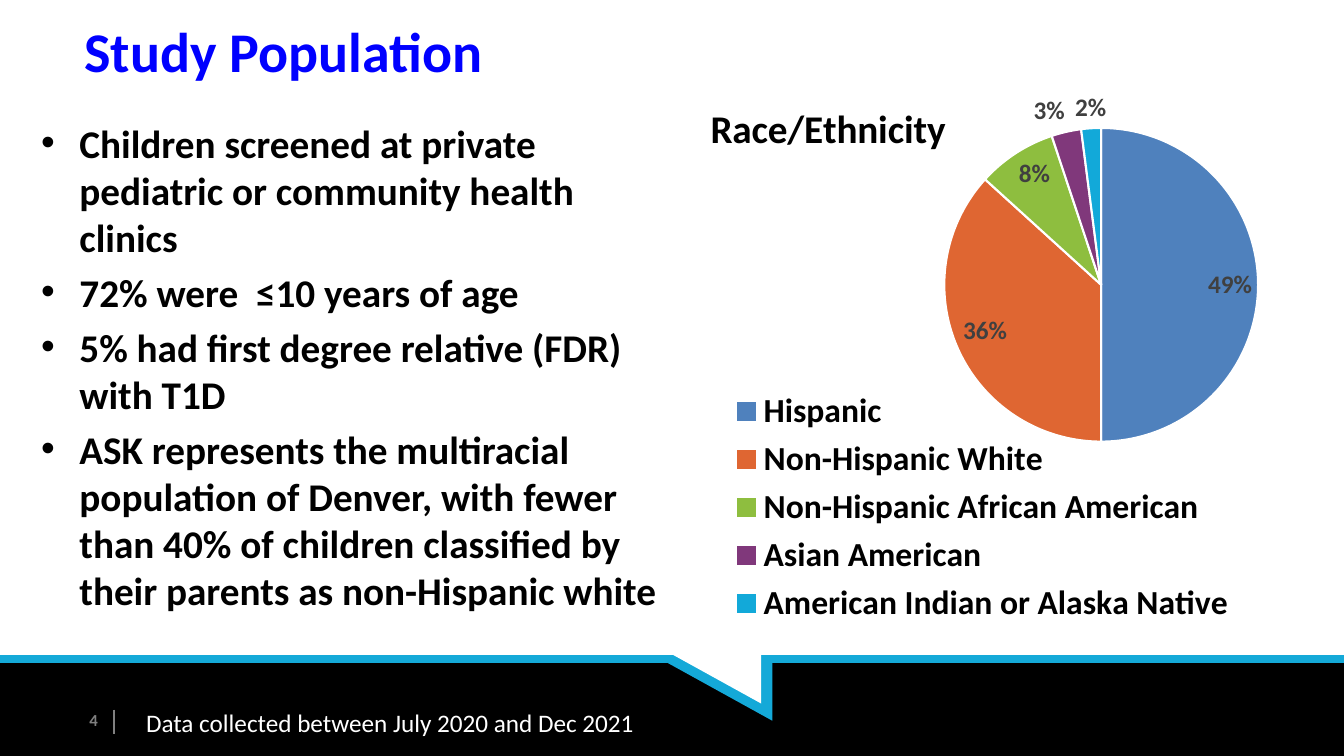
from lxml import etree
from pptx import Presentation
from pptx.chart.data import CategoryChartData
from pptx.dml.color import RGBColor
from pptx.enum.chart import XL_CHART_TYPE, XL_LABEL_POSITION, XL_LEGEND_POSITION
from pptx.enum.shapes import MSO_CONNECTOR, MSO_SHAPE
from pptx.enum.text import MSO_ANCHOR, PP_ALIGN
from pptx.oxml.ns import qn
from pptx.util import Inches, Pt

RECTANGLE = MSO_SHAPE.RECTANGLE
RIGHT_TRIANGLE = MSO_SHAPE.RIGHT_TRIANGLE
STRAIGHT = MSO_CONNECTOR.STRAIGHT
PIE = XL_CHART_TYPE.PIE
INSIDE = XL_LABEL_POSITION.INSIDE_END
OUTSIDE = XL_LABEL_POSITION.OUTSIDE_END
BOTTOM = XL_LEGEND_POSITION.BOTTOM
TOP, MIDDLE = MSO_ANCHOR.TOP, MSO_ANCHOR.MIDDLE
LEFT, RIGHT = PP_ALIGN.LEFT, PP_ALIGN.RIGHT

FONT = "Calibri"
COLORS = {
    "black": "000000", "white": "FFFFFF", "title": "0000FF", "cyan": "14A9D8",
    "divider": "808080", "number": "7F7F7F", "label": "404040",
    "hispanic": "4F81BD", "european": "DF6632", "african": "8EBE3F",
    "asian": "80387B", "native": "12A9D9",
}
FINDINGS = [
    "Children screened at private pediatric or community health clinics",
    "72% were  ≤10 years of age",
    "5% had first degree relative (FDR) with T1D",
    "ASK represents the multiracial population of Denver, with fewer than 40% "
    "of children classified by their parents as non-Hispanic white",
]
GROUPS = [
    ("Hispanic", 0.49, "hispanic", INSIDE),
    ("Non-Hispanic White", 0.36, "european", INSIDE),
    ("Non-Hispanic African American", 0.08, "african", INSIDE),
    ("Asian American", 0.03, "asian", OUTSIDE),
    ("American Indian or Alaska Native", 0.02, "native", OUTSIDE),
]


def color(name):
    return RGBColor.from_string(COLORS[name])


class Page:
    def __init__(self, deck):
        self.slide = deck.slides.add_slide(deck.slide_layouts[6])
        self.shapes = self.slide.shapes

    def style(self, font, size, name, bold=True):
        font.name = FONT
        font.size = Pt(size)
        font.bold = bold
        font.color.rgb = color(name)

    def shape(self, kind, frame, fill, rotation=0):
        shape = self.shapes.add_shape(kind, *map(Inches, frame))
        shape.shadow.inherit = False
        shape.fill.solid()
        shape.fill.fore_color.rgb = color(fill)
        shape.line.fill.background()
        shape.rotation = rotation

    def line(self, ends, name, width):
        line = self.shapes.add_connector(STRAIGHT, *map(Inches, ends))
        line.line.color.rgb = color(name)
        line.line.width = Pt(width)
        etree.SubElement(line._element.spPr, qn("a:effectLst"))

    def text(self, frame, lines, size, name, bold=True, anchor=TOP, align=LEFT, bullets=False):
        box = self.shapes.add_textbox(*map(Inches, frame)).text_frame
        box.word_wrap = True
        box.vertical_anchor = anchor
        for index, words in enumerate(lines):
            para = box.paragraphs[0] if index == 0 else box.add_paragraph()
            para.alignment = align
            if index:
                para.space_before = Pt(size * 0.2)
            if bullets:
                properties = para._p.get_or_add_pPr()
                properties.set("marL", str(Inches(0.38)))
                properties.set("indent", str(-Inches(0.38)))
                etree.SubElement(properties, qn("a:buFont"), typeface="Arial")
                etree.SubElement(properties, qn("a:buChar"), char="•")
            span = para.add_run()
            span.text = words
            self.style(span.font, size, name, bold)

    def place(self, element, before, **layout):
        for old in element.findall(qn("c:layout")):
            element.remove(old)
        outer = etree.Element(qn("c:layout"))
        manual = etree.SubElement(outer, qn("c:manualLayout"))
        for tag, value in layout.items():
            etree.SubElement(manual, qn(f"c:{tag}"), val=str(value))
        element.find(qn(before)).addprevious(outer)

    def pie(self, frame, title, groups):
        data = CategoryChartData(number_format="0%")
        data.categories = [group[0] for group in groups]
        data.add_series("Series 1", [group[1] for group in groups])
        chart = self.shapes.add_chart(PIE, *map(Inches, frame), data).chart
        self.style(chart.font, 10, "black", False)

        chart.has_title = True
        span = chart.chart_title.text_frame.paragraphs[0].add_run()
        span.text = title
        self.style(span.font, 28, "black")
        chart.chart_title.include_in_layout = False
        self.place(chart.chart_title._element, "c:overlay",
                   xMode="edge", yMode="edge", x=0.03, y=0.09)

        chart.has_legend = True
        chart.legend.position = BOTTOM
        chart.legend.include_in_layout = False
        self.style(chart.legend.font, 24, "black")
        self.place(chart.legend._element, "c:overlay",
                   xMode="edge", yMode="edge", x=0.06, y=0.58, w=0.78, h=0.42)

        plot = chart.plots[0]
        plot.vary_by_categories = True
        self.place(plot._element.getparent(), "c:pieChart", layoutTarget="inner",
                   xMode="edge", yMode="edge", x=0.393, y=0.106, w=0.473, h=0.612)
        for index, (_, _, fill, position) in enumerate(groups):
            point = plot.series[0].points[index]
            point.format.fill.solid()
            point.format.fill.fore_color.rgb = color(fill)
            point.format.line.color.rgb = color("white")
            point.format.line.width = Pt(1.5)
            self.style(point.data_label.font, 18, "label")
            point.data_label.position = position


def main():
    deck = Presentation()
    deck.slide_width, deck.slide_height = Inches(13.33), Inches(7.5)
    page = Page(deck)
    page.shape(RECTANGLE, (0, 6.54, 13.33, 0.96), "black")
    page.line((0, 6.54, 13.33, 6.54), "cyan", 6)
    page.shape(RIGHT_TRIANGLE, (6.61, 6.57, 1.05, 0.58), "cyan", 180)
    page.shape(RIGHT_TRIANGLE, (6.5, 6.4, 1.05, 0.58), "white", 180)
    page.line((1.13, 7.04, 1.13, 7.28), "divider", 1)
    page.text((0.74, -0.13, 6.98, 1.25), ["Study Population"], 40, "title", anchor=MIDDLE)
    page.text((0.31, 1.13, 6.35, 5.81), FINDINGS, 28, "black", bullets=True)
    page.text((0.31, 6.94, 0.76, 0.4), ["4"], 12, "number", anchor=MIDDLE, align=RIGHT)
    page.pie((6.78, 0.42, 6.58, 5.84), "Race/Ethnicity", GROUPS)
    page.text((1.35, 6.97, 5.21, 0.4), ["Data collected between July 2020 and Dec 2021"],
              18, "white", bold=False)
    deck.save("out.pptx")


if __name__ == "__main__":
    main()
